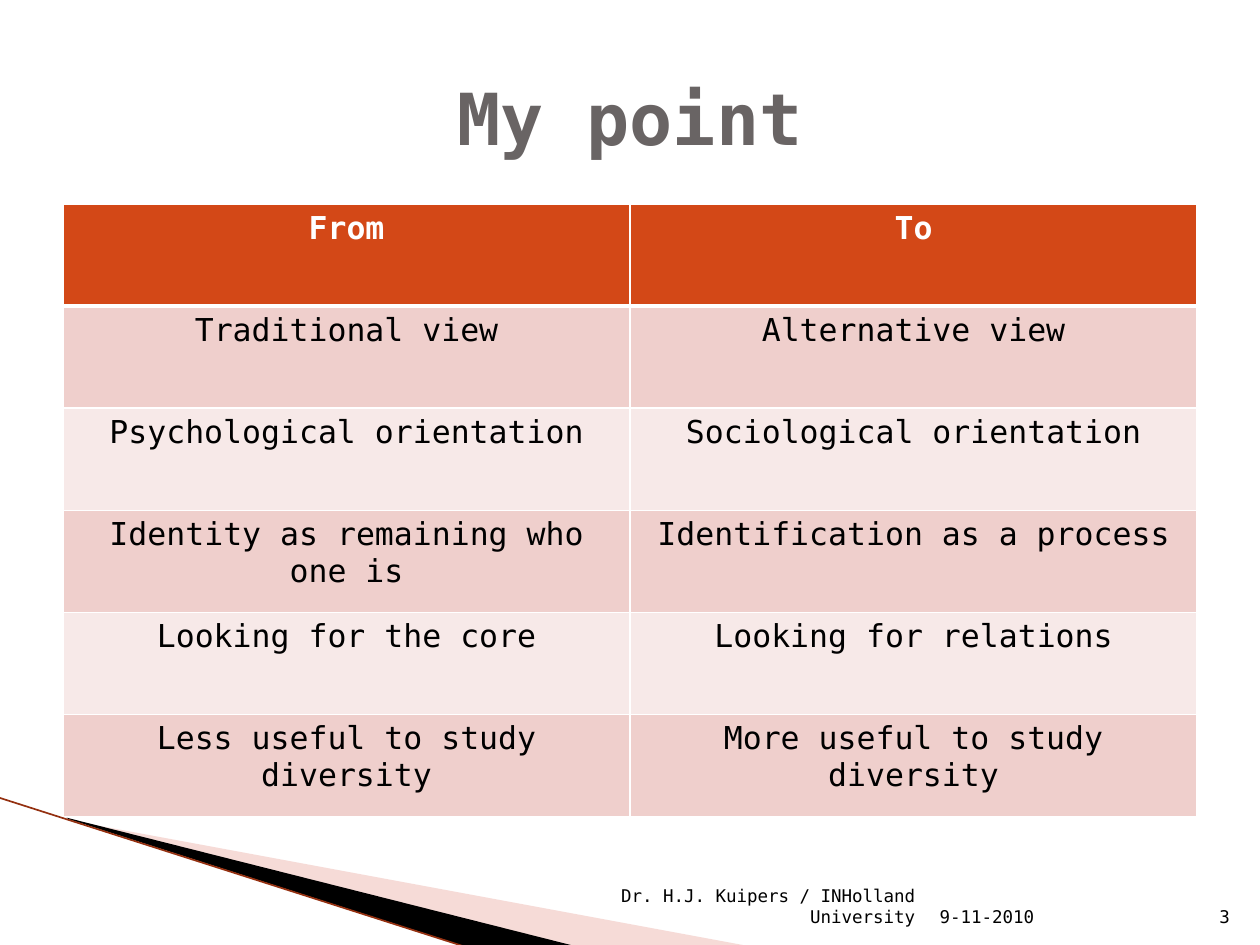
from lxml import etree
from pptx import Presentation
from pptx import util as u
from pptx.dml.color import RGBColor
from pptx.enum import shapes, text
from pptx.oxml.ns import qn

FONT = "DejaVu Sans Mono"
WHITE = RGBColor(0xFF, 0xFF, 0xFF)
BLACK = RGBColor(0, 0, 0)
GREY = RGBColor(0x69, 0x64, 0x64)
ORANGE = RGBColor(0xD3, 0x48, 0x17)
BANDS = RGBColor(0xEF, 0xCF, 0xCC), RGBColor(0xF7, 0xE9, 0xE8)
SALMON = RGBColor(0xE9, 0xA5, 0x9D)
RUST = RGBColor(0x94, 0x30, 0x10)

LEFT, RIGHT, CENTER = text.PP_ALIGN.LEFT, text.PP_ALIGN.RIGHT, text.PP_ALIGN.CENTER
MIDDLE, BOTTOM = text.MSO_ANCHOR.MIDDLE, text.MSO_ANCHOR.BOTTOM

TITLE = "My point"
ROWS = [
    ("From", "To"),
    ("Traditional view", "Alternative view"),
    ("Psychological orientation", "Sociological orientation"),
    ("Identity as remaining who one is", "Identification as a process"),
    ("Looking for the core", "Looking for relations"),
    ("Less useful to study diversity", "More useful to study diversity"),
]
# Footer parts from left to right: text, width, alignment
FOOTER = [
    ("Dr. H.J. Kuipers / INHolland University", 2.57, RIGHT),
    ("9-11-2010", 2.1, LEFT),
    ("3", 0.4, RIGHT),
]
# Corner wedges: frame, points on the slide, colour, opacity in percent
WEDGES = [
    ((0.78, 5.47, 4.16, 1.58),
     [(0.55, 6.51), (5.95, 7.51), (4.56, 7.51), (0.55, 6.5)], SALMON, 40),
    ((-0.06, 6.33, 4.16, 0.92),
     [(0.53, 6.49), (4.57, 7.51), (3.72, 7.52), (0.54, 6.5)], BLACK, 100),
]

MARGIN, ROW_H = 0.5, 0.81
TABLE_TOP, FOOTER_LEFT, FOOTER_TOP = 1.62, 4.79, 7.01


def style(p, size, color, align, bold=False):
    p.alignment = align
    p.font.name = FONT
    p.font.size = u.Pt(size)
    p.font.bold = bold
    p.font.color.rgb = color


def add_text(slide, words, box, size, color, align, anchor, bold=False):
    tf = slide.shapes.add_textbox(*map(u.Inches, box)).text_frame
    tf.word_wrap = True
    tf.vertical_anchor = anchor
    tf.text = words
    style(tf.paragraphs[0], size, color, align, bold)


def set_frame(sp, frame):
    """Give a freeform another frame while its outline stays in place."""
    left, top, width, height = map(u.Inches, frame)
    dx, dy = sp.left - left, sp.top - top
    outline = sp._element.find(".//" + qn("a:path"))
    outline.set("w", str(width))
    outline.set("h", str(height))
    for pt in outline.iter(qn("a:pt")):
        pt.set("x", str(int(pt.get("x")) + dx))
        pt.set("y", str(int(pt.get("y")) + dy))
    sp.left, sp.top, sp.width, sp.height = left, top, width, height


def add_wedge(slide, frame, points, color, opacity):
    start, *rest = [tuple(map(u.Inches, pt)) for pt in points]
    builder = slide.shapes.build_freeform(*start)
    builder.add_line_segments(rest)
    sp = builder.convert_to_shape()
    set_frame(sp, frame)
    sp.shadow.inherit = False
    sp.line.fill.background()
    sp.fill.solid()
    sp.fill.fore_color.rgb = color
    if opacity < 100:
        clr = sp.fill._xPr.find(".//" + qn("a:srgbClr"))
        etree.SubElement(clr, qn("a:alpha"), val=str(opacity * 1000))


def add_corner_line(slide):
    ends = map(u.Inches, (-0.01, 6.33, 3.71, 7.52))
    line = slide.shapes.add_connector(shapes.MSO_CONNECTOR.STRAIGHT, *ends)
    line.line.color.rgb = RUST
    line.line.width = u.Pt(0.95)
    etree.SubElement(line._element.spPr, qn("a:effectLst"))


def set_borders(cell, bottom):
    tc_pr = cell._tc.get_or_add_tcPr()
    for side, width in ("L", 1), ("R", 1), ("T", 1), ("B", bottom):
        ln = etree.SubElement(tc_pr, qn("a:ln" + side), w=str(u.Pt(width)))
        fill = etree.SubElement(ln, qn("a:solidFill"))
        etree.SubElement(fill, qn("a:srgbClr"), val=str(WHITE))


def add_comparison(slide, width):
    box = MARGIN, TABLE_TOP, width, ROW_H * len(ROWS)
    table = slide.shapes.add_table(len(ROWS), len(ROWS[0]), *map(u.Inches, box)).table
    for r, row in enumerate(ROWS):
        header = r == 0
        for c, words in enumerate(row):
            cell = table.cell(r, c)
            set_borders(cell, bottom=3 if header else 1)
            cell.fill.solid()
            cell.fill.fore_color.rgb = ORANGE if header else BANDS[(r - 1) % 2]
            cell.text = words
            style(cell.text_frame.paragraphs[0], 18, WHITE if header else BLACK, CENTER, header)


def main():
    prs = Presentation()
    prs.slide_width, prs.slide_height = u.Inches(10), u.Inches(7.5)
    slide = prs.slides.add_slide(prs.slide_layouts[6])
    content_w = 10 - 2 * MARGIN

    for wedge in WEDGES:
        add_wedge(slide, *wedge)
    add_corner_line(slide)
    add_comparison(slide, content_w)

    left = FOOTER_LEFT
    for words, width, align in FOOTER:
        add_text(slide, words, (left, FOOTER_TOP, width, 0.4), 10, BLACK, align, BOTTOM)
        left += width
    add_text(slide, TITLE, (MARGIN, 0.3, content_w, 1.25), 41, GREY, CENTER, MIDDLE, True)

    prs.save("out.pptx")


if __name__ == "__main__":
    main()
